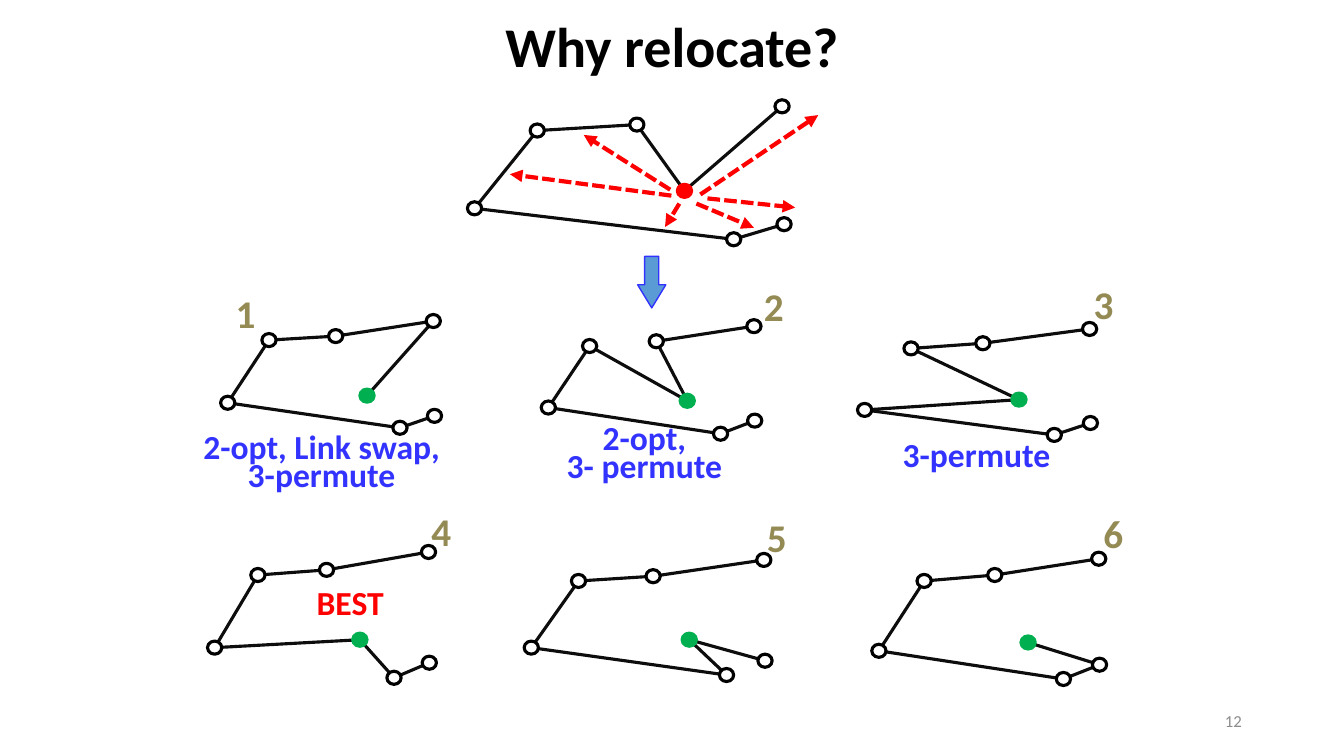
from itertools import pairwise

from lxml import etree
from pptx import Presentation
from pptx import util as u
from pptx.dml.color import RGBColor
from pptx.enum import dml, shapes, text
from pptx.oxml import ns

COLOURS = {
    "black": "000000", "edge": "0D0D0D", "white": "FFFFFF", "red": "FF0000",
    "green": "00B050", "blue": "3333FF", "arrow": "5B9BD5",
    "olive": "948A54", "grey": "8C8C8C",
}
NODE_WIDTH, NODE_HEIGHT = 0.36, 0.33

# Node centres in cm; x is the node that is relocated
START_NODES = {"a": (19.71, 2.68), "b": (16.05, 3.14), "c": (13.54, 3.29), "d": (11.96, 5.25),
               "e": (18.49, 6.03), "f": (19.76, 5.65), "x": (17.25, 4.81)}

# Visiting order, number position, node centres
OPTIONS = [
    ("xabcdef", (5.69, 7.16),
     {"a": (10.92, 8.09), "b": (8.46, 8.47), "c": (6.78, 8.57), "d": (5.74, 10.15),
      "e": (10.08, 10.78), "f": (10.95, 10.48), "x": (9.25, 9.97)}),
    ("abxcdef", (19, 6.99),
     {"a": (19, 8.22), "b": (16.54, 8.6), "c": (14.86, 8.72), "d": (13.82, 10.27),
      "e": (18.16, 10.93), "f": (19.02, 10.6), "x": (17.32, 10.1)}),
    ("abcxdef", (27.31, 6.93),
     {"a": (27.46, 8.29), "b": (24.77, 8.65), "c": (22.96, 8.78), "d": (21.79, 10.33),
      "e": (26.57, 10.96), "f": (27.48, 10.66), "x": (25.68, 10.07)}),
    ("abcdxef", (10.62, 12.67),
     {"a": (10.8, 13.91), "b": (8.23, 14.36), "c": (6.5, 14.49), "d": (5.41, 16.32),
      "e": (9.93, 17.08), "f": (10.82, 16.7), "x": (9.07, 16.12)}),
    ("abcdexf", (19.08, 12.8),
     {"a": (19.25, 14.11), "b": (16.46, 14.52), "c": (14.58, 14.64), "d": (13.39, 16.32),
      "e": (18.31, 17.01), "f": (19.28, 16.65), "x": (17.37, 16.12)}),
    ("abcdefx", (27.56, 12.7),
     {"a": (27.69, 14.08), "b": (25.07, 14.49), "c": (23.29, 14.64), "d": (22.15, 16.4),
      "e": (26.8, 17.11), "f": (27.71, 16.75), "x": (25.91, 16.19)}),
]

# Possible moves of the red node: start, end
MOVES = [
    ((17.12, 5.13), (16.76, 5.72)),
    ((17.55, 5.13), (19, 5.74)),
    ((16.92, 4.93), (12.85, 4.39)),
    ((16.89, 4.78), (14.71, 3.4)),
    ((17.65, 4.9), (20.62, 2.9)),
    ((17.83, 5), (20.04, 5.23)),
]

# Wording, box, colour, line spacing
CAPTIONS = [
    ("2-opt, Link swap, 3-permute", (4.75, 10.92, 6.71, 1.6), "blue", u.Pt(20)),
    ("2-opt,\n3- permute", (13.74, 10.69, 5, 1.55), "blue", u.Pt(20)),
    ("3-permute", (21.46, 10.92, 6.3, 1.24), "blue", u.Pt(25.6)),
    ("BEST", (6.73, 14.55, 4.19, 1.52), "red", None),
]


def colour(name):
    return RGBColor.from_string(COLOURS[name])


def cm(*lengths):
    return [u.Cm(length) for length in lengths]


def add_label(canvas, wording, box, size, shade, bold=True, align="CENTER",
              anchor="TOP", spacing=None):
    frame = canvas.add_textbox(*cm(*box)).text_frame
    frame.word_wrap = True
    frame.vertical_anchor = text.MSO_ANCHOR[anchor]
    frame.text = wording
    for paragraph in frame.paragraphs:
        paragraph.alignment = text.PP_ALIGN[align]
        paragraph.line_spacing = spacing
        for run in paragraph.runs:
            run.font.name = "Calibri"
            run.font.size = u.Pt(size)
            run.font.bold = bold
            run.font.color.rgb = colour(shade)


def add_line(canvas, start, end, shade="edge", width=2.25):
    line = canvas.add_connector(shapes.MSO_CONNECTOR.STRAIGHT, *cm(*start, *end))
    line.line.color.rgb = colour(shade)
    line.line.width = u.Pt(width)
    etree.SubElement(line._element.spPr, ns.qn("a:effectLst"))
    return line


def add_move(canvas, start, end):
    move = add_line(canvas, start, end, "red", 3)
    move.line.dash_style = dml.MSO_LINE.SQUARE_DOT
    outline = move._element.spPr.find(ns.qn("a:ln"))
    etree.SubElement(outline, ns.qn("a:tailEnd"), type="triangle")


def add_solid(canvas, kind, box, fill, border, width):
    solid = canvas.add_shape(kind, *cm(*box))
    solid.shadow.inherit = False
    solid.fill.solid()
    solid.fill.fore_color.rgb = colour(fill)
    solid.line.color.rgb = colour(border)
    solid.line.width = u.Pt(width)
    return solid


def add_tour(canvas, order, nodes, moved_shade):
    for here, there in pairwise(order):
        add_line(canvas, nodes[here], nodes[there])
    for name, (x, y) in nodes.items():
        fill, border = (moved_shade, moved_shade) if name == "x" else ("white", "black")
        box = (x - NODE_WIDTH / 2, y - NODE_HEIGHT / 2, NODE_WIDTH, NODE_HEIGHT)
        add_solid(canvas, shapes.MSO_SHAPE.OVAL, box, fill, border, 2.25)


def main():
    deck = Presentation()
    deck.slide_width, deck.slide_height = cm(33.87, 19.05)
    slide = deck.slides.add_slide(deck.slide_layouts[6])

    # Title
    add_label(slide.shapes, "Why relocate?", (0, 0, 33.87, 2.51), 40, "black",
              anchor="MIDDLE", spacing=0.9)

    # Starting tour and the moves of its red node
    start = slide.shapes.add_group_shape().shapes
    add_tour(start, "axbcdef", START_NODES, "red")
    for tail, head in MOVES:
        add_move(start, tail, head)

    # Arrow down to the options
    down = add_solid(slide.shapes, shapes.MSO_SHAPE.DOWN_ARROW,
                     (16.07, 6.46, 0.71, 1.3), "arrow", "blue", 1)
    down.adjustments[0] = 0.5
    down.adjustments[1] = 0.82

    # Six numbered options
    for number, (order, corner, nodes) in enumerate(OPTIONS, 1):
        option = slide.shapes.add_group_shape().shapes
        add_tour(option, order, nodes, "green")
        add_label(option, str(number), (*corner, 0.91, 1.35), 28, "olive")

    # Captions
    for wording, box, shade, spacing in CAPTIONS:
        add_label(slide.shapes, wording, box, 24, shade, spacing=spacing)

    # Slide number
    add_label(slide.shapes, "12", (23.93, 17.65, 7.62, 1.02), 12, "grey",
              bold=False, align="RIGHT", anchor="MIDDLE")

    deck.save("out.pptx")


if __name__ == "__main__":
    main()
